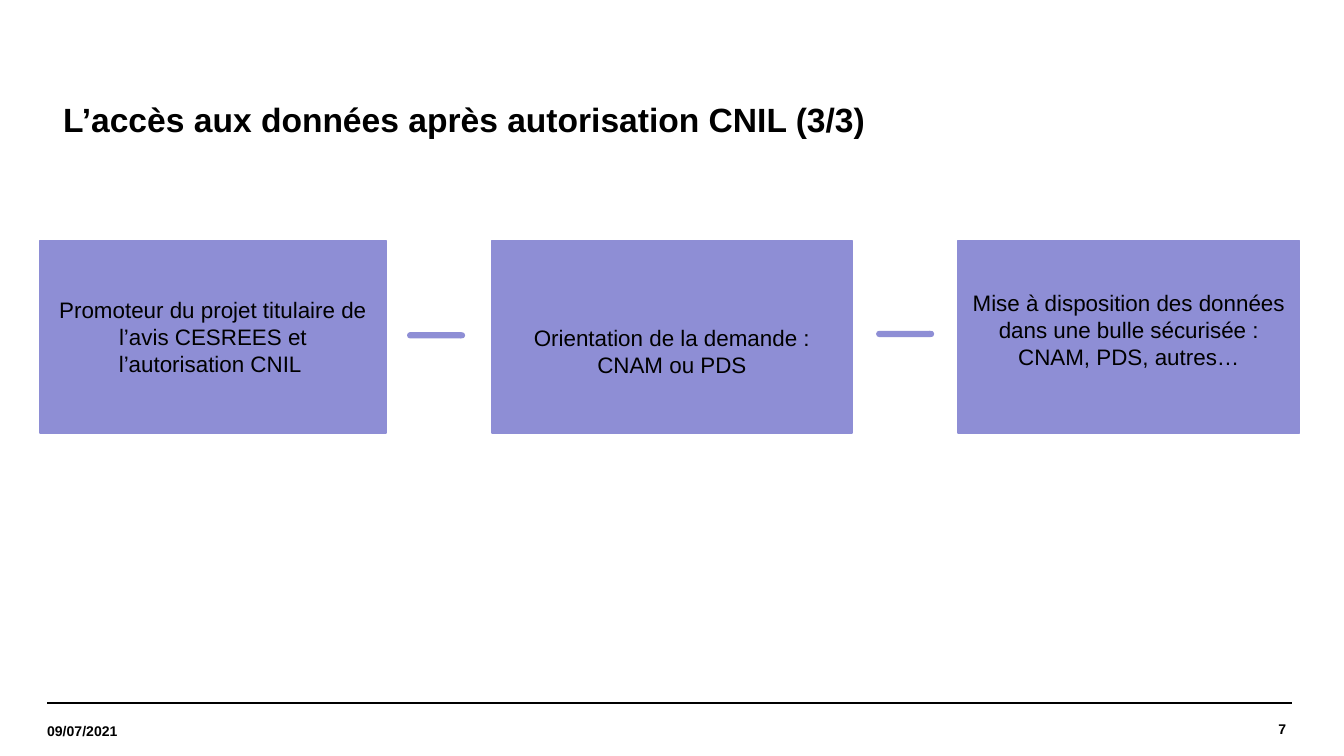
from pptx import Presentation
from pptx.dml.color import RGBColor
from pptx.enum.shapes import MSO_CONNECTOR, MSO_SHAPE
from pptx.enum.text import MSO_ANCHOR, PP_ALIGN
from pptx.oxml.ns import qn
from pptx.util import Inches, Pt
from lxml import etree

BLACK = "000000"
LAVENDER = "8E8ED5"
STEP_TOP, STEP_HEIGHT = 1.79, 1.43


def color(value):
    return RGBColor.from_string(value)


def write(frame, text, size=12, bold=False, align=PP_ALIGN.LEFT,
          margins=(0.1, 0.05, 0.1, 0.05), spacing=None):
    frame.word_wrap = True
    frame.vertical_anchor = MSO_ANCHOR.MIDDLE
    (frame.margin_left, frame.margin_top,
     frame.margin_right, frame.margin_bottom) = map(Inches, margins)
    frame.text = text
    for paragraph in frame.paragraphs:
        paragraph.alignment = align
        paragraph.line_spacing = spacing
        for run in paragraph.runs:
            run.font.name = "Arial"
            run.font.size = Pt(size)
            run.font.bold = bold
            run.font.color.rgb = color(BLACK)


def add_title(slide, text):
    title = slide.shapes.title
    title.left, title.top = Inches(0.35), Inches(0.61)
    title.width, title.height = Inches(9.21), Inches(0.59)
    write(title.text_frame, text, size=18, bold=True, spacing=0.9,
          margins=(0.12, 0.05, 0.1, 0.05))


def add_filled(slide, kind, left, top, width, height, line_width):
    filled = slide.shapes.add_shape(
        kind, Inches(left), Inches(top), Inches(width), Inches(height))
    filled.shadow.inherit = False
    filled.fill.solid()
    filled.fill.fore_color.rgb = color(LAVENDER)
    filled.line.color.rgb = color(LAVENDER)
    filled.line.width = Pt(line_width)
    return filled


def add_step(slide, left, width, text, top_margin, bottom_margin):
    step = add_filled(slide, MSO_SHAPE.RECTANGLE,
                      left, STEP_TOP, width, STEP_HEIGHT, 1)
    write(step.text_frame, text, align=PP_ALIGN.CENTER,
          margins=(0.1, top_margin, 0.1, bottom_margin))


def add_arrow(slide, left, top):
    arrow = add_filled(slide, MSO_SHAPE.RIGHT_ARROW, left, top, 0.39, 0.01, 3)
    outline = arrow.element.spPr.find(qn("a:ln"))
    etree.SubElement(outline, qn("a:round"))


def add_rule(slide, left):
    rule = slide.shapes.add_connector(
        MSO_CONNECTOR.STRAIGHT, Inches(left), Inches(5.23),
        Inches(left + 9.22), Inches(5.23))
    rule.line.color.rgb = color(BLACK)
    rule.line.width = Pt(0.8)
    etree.SubElement(rule.element.spPr, qn("a:effectLst"))


def add_footer(slide, left, top, width, height, text, align):
    footer = slide.shapes.add_textbox(
        Inches(left), Inches(top), Inches(width), Inches(height))
    write(footer.text_frame, text, size=7.5, bold=True, align=align,
          margins=(0, 0, 0, 0))


def main():
    deck = Presentation()
    deck.slide_width = Inches(10)
    deck.slide_height = Inches(10 * 9 / 16)
    slide = deck.slides.add_slide(deck.slide_layouts[5])

    for left in (0.35, 0.39):
        add_rule(slide, left)
    add_footer(slide, 8.09, 5.23, 1.48, 0.39, "7", PP_ALIGN.RIGHT)
    add_footer(slide, 0.35, 5.25, 1.32, 0.38, "09/07/2021", PP_ALIGN.LEFT)
    add_title(slide, "L’accès aux données après autorisation CNIL (3/3)")

    steps = [
        (0.3, 2.57, "Promoteur du projet titulaire de l’avis CESREES et "
                    "l’autorisation CNIL ", 0.05, 0.05),
        (3.66, 2.68, "Orientation de la demande :\nCNAM ou PDS", 0.27, 0.05),
        (7.13, 2.54, "Mise à disposition des données dans une bulle "
                     "sécurisée :\nCNAM, PDS, autres…", 0.05, 0.15),
    ]
    for step in steps:
        add_step(slide, *step)
    for left, top in ((6.54, 2.48), (3.05, 2.49)):
        add_arrow(slide, left, top)

    deck.save("out.pptx")


if __name__ == "__main__":
    main()
